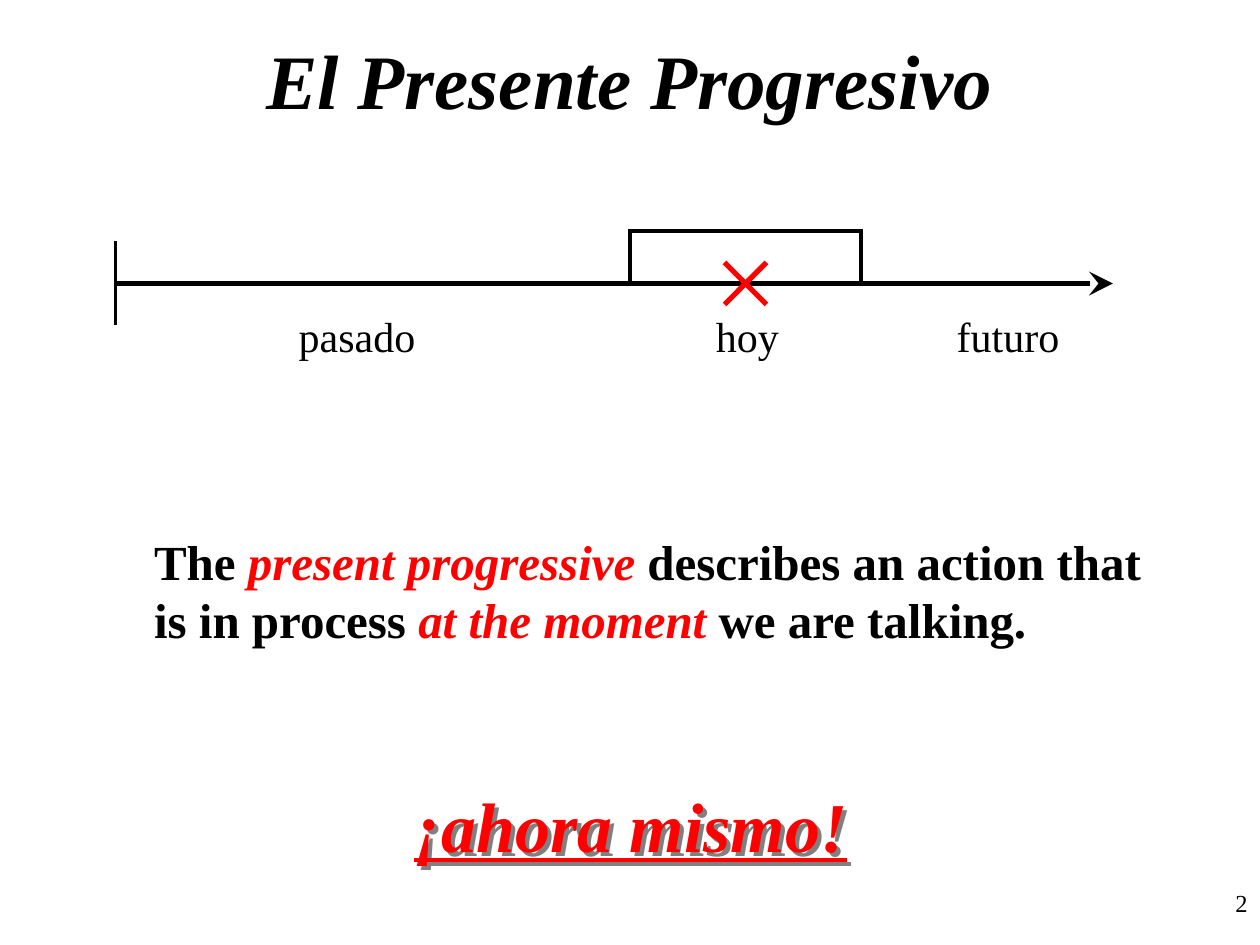
from lxml import etree
from pptx import Presentation
from pptx.dml.color import RGBColor
from pptx.enum.shapes import MSO_CONNECTOR, MSO_SHAPE
from pptx.enum.text import MSO_ANCHOR, PP_ALIGN
from pptx.oxml.ns import qn
from pptx.util import Pt

BLACK = RGBColor(0x00, 0x00, 0x00)
RED = RGBColor(0xFF, 0x00, 0x00)
GRAY = RGBColor(0x80, 0x80, 0x80)
FONT = "Times New Roman"
LEFT, CENTER, RIGHT = PP_ALIGN.LEFT, PP_ALIGN.CENTER, PP_ALIGN.RIGHT
TOP, MIDDLE = MSO_ANCHOR.TOP, MSO_ANCHOR.MIDDLE
STRAIGHT = MSO_CONNECTOR.STRAIGHT

# Content: a text is a list of (words, is highlighted)
PAGE_NUMBER = "2"
TITLE = "El Presente Progresivo"
PERIODS = [("hoy", 427, 54), ("pasado", 204, 84), ("futuro", 576, 76)]  # centre, width
DEFINITION = [
    ("The ", False),
    ("present progressive", True),
    (" describes an action that is in process ", False),
    ("at the moment", True),
    (" we are talking.", False),
]
MOTTO = "¡ahora mismo!"

# Timeline geometry
AXIS_Y, AXIS_START, AXIS_END = 162, 66, 636
TICK_HALF = 24
NOW_LEFT, NOW_WIDTH, NOW_HEIGHT = 360, 132, 30
CROSS_HALF = 12

prs = Presentation()
prs.slide_width, prs.slide_height = Pt(720), Pt(540)
slide = prs.slides.add_slide(prs.slide_layouts[6])


def add_text(parts, left, top, width, height, size, align=LEFT, anchor=TOP,
             bold=False, wrap=True):
    box = slide.shapes.add_textbox(Pt(left), Pt(top), Pt(width), Pt(height))
    frame = box.text_frame
    frame.word_wrap = wrap
    frame.vertical_anchor = anchor
    paragraph = frame.paragraphs[0]
    paragraph.alignment = align
    for words, highlighted in parts:
        run = paragraph.add_run()
        run.text = words
        font = run.font
        font.name, font.size, font.bold = FONT, Pt(size), bold
        font.italic = highlighted
        font.color.rgb = RED if highlighted else BLACK
    return box


def add_line(x1, y1, x2, y2, color, width):
    line = slide.shapes.add_connector(STRAIGHT, Pt(x1), Pt(y1), Pt(x2), Pt(y2))
    line.line.color.rgb = color
    line.line.width = Pt(width)
    etree.SubElement(line._element.spPr, qn("a:effectLst"))
    return line


# Page number and title
add_text([(PAGE_NUMBER, False)], 606, 504, 114, 24, 14, RIGHT)
title = add_text([(TITLE, False)], 54, 0, 612, 90, 44, CENTER, MIDDLE, bold=True)
title.text_frame.paragraphs[0].runs[0].font.italic = True

# Period labels
for period, center, width in PERIODS:
    add_text([(period, False)], center - width / 2, 174, width, 36, 24, CENTER, wrap=False)

# Time axis with its arrowhead and starting tick
axis = add_line(AXIS_START, AXIS_Y, AXIS_END, AXIS_Y, BLACK, 2.75)
etree.SubElement(axis.line._get_or_add_ln(), qn("a:tailEnd"), type="stealth", w="lg", len="lg")
add_line(AXIS_START, AXIS_Y - TICK_HALF, AXIS_START, AXIS_Y + TICK_HALF, BLACK, 2.25)

# Span around the present
now_span = slide.shapes.add_shape(MSO_SHAPE.RECTANGLE, Pt(NOW_LEFT), Pt(AXIS_Y - NOW_HEIGHT),
                                  Pt(NOW_WIDTH), Pt(NOW_HEIGHT))
now_span.shadow.inherit = False
now_span.fill.background()
now_span.line.color.rgb = BLACK
now_span.line.width = Pt(2.25)
etree.SubElement(now_span.line._get_or_add_ln(), qn("a:miter"), lim="800000")

# Red cross on today
today = NOW_LEFT + NOW_WIDTH / 2
for reach in (CROSS_HALF, -CROSS_HALF):
    add_line(today + reach, AXIS_Y - CROSS_HALF, today - reach, AXIS_Y + CROSS_HALF, RED, 3)

# Definition, indented
definition = add_text(DEFINITION, 54, 300, 612, 78, 28, bold=True)
definition.text_frame.paragraphs[0]._p.get_or_add_pPr().set("marL", str(Pt(27)))

# Motto, underlined; the unfilled box casts its shadow from the letters
motto = add_text([(MOTTO, True)], 227.5, 443.5, 266, 55.5, 40, CENTER, bold=True, wrap=False)
motto.text_frame.paragraphs[0].runs[0].font.underline = True
effects = etree.SubElement(motto._element.spPr, qn("a:effectLst"))
shadow = etree.SubElement(effects, qn("a:outerShdw"), dist=str(Pt(3.2)), dir="2700000",
                          algn="ctr", rotWithShape="0")
etree.SubElement(shadow, qn("a:srgbClr"), val=str(GRAY))

prs.save("out.pptx")
